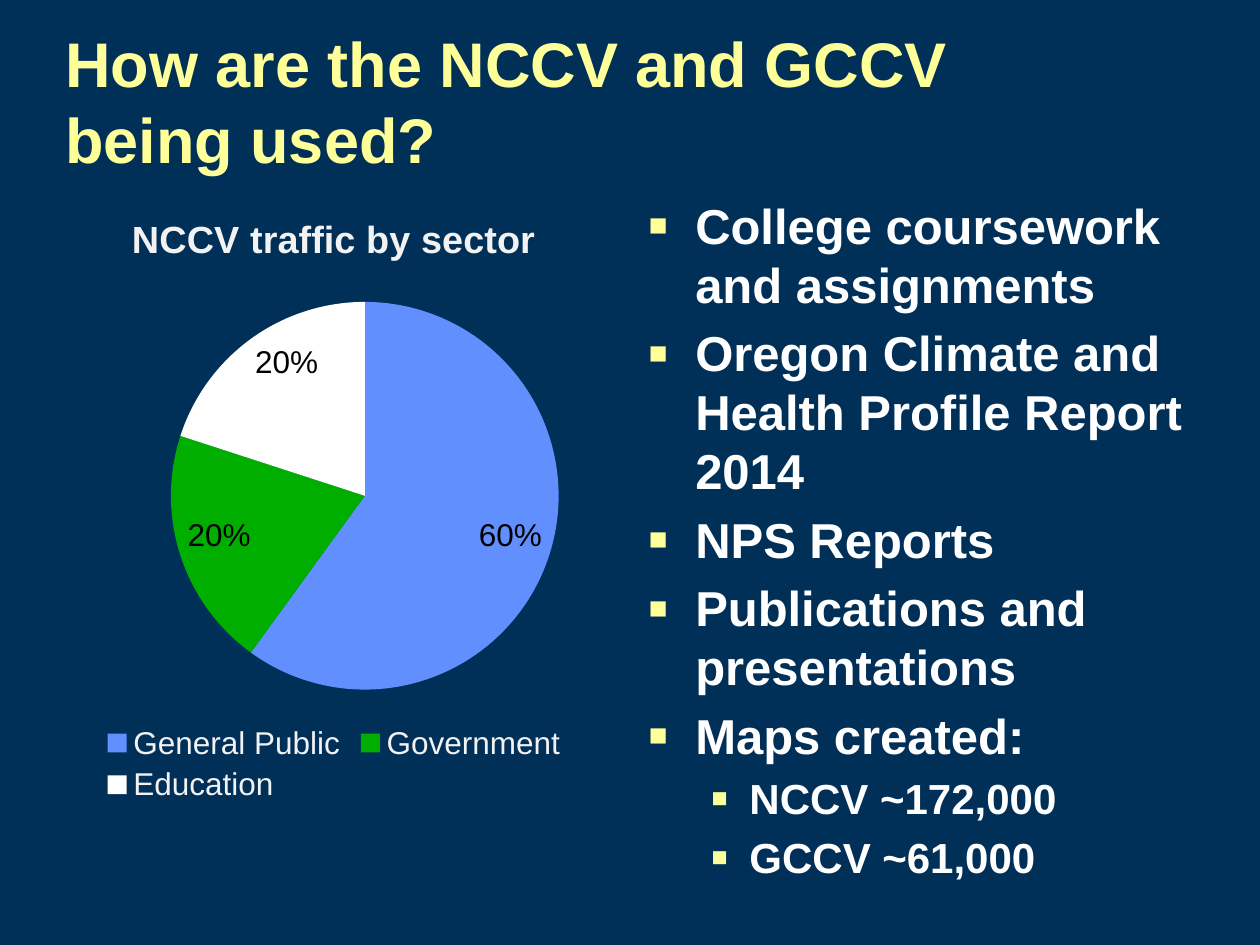
from lxml import etree
from pptx import Presentation
from pptx import util as u
from pptx.chart.data import CategoryChartData
from pptx.dml.color import RGBColor
from pptx.enum import chart as ch, text
from pptx.oxml import ns

COLORS = {"navy": "002F57", "yellow": "FFFF99", "white": "FFFFFF", "pale": "F2F2F2",
          "black": "000000", "blue": "618FFD", "green": "00AE00"}


def rgb(name):
    return RGBColor.from_string(COLORS[name])


class Deck:
    """Holds the style and the current slide."""
    font = "Arial"
    # Per level: text size, left margin and hanging indent in inches
    levels = [(28, 0.38, 0.38), (24, 0.81, 0.31)]

    def __init__(self, width, height):
        self.prs = Presentation()
        self.prs.slide_width, self.prs.slide_height = u.Inches(width), u.Inches(height)

    def slide(self, background):
        self.s = self.prs.slides.add_slide(self.prs.slide_layouts[6])
        self.s.background.fill.solid()
        self.s.background.fill.fore_color.rgb = rgb(background)

    def style(self, font, size, color, bold=False):
        font.name, font.size, font.bold = self.font, u.Pt(size), bold
        font.color.rgb = rgb(color)

    def run(self, p, words, size, color):
        r = p.add_run()
        r.text = words
        self.style(r.font, size, color, bold=True)

    def box(self, at, anchor):
        tf = self.s.shapes.add_textbox(*map(u.Inches, at)).text_frame
        tf.word_wrap = True
        tf.vertical_anchor = anchor
        return tf

    def title(self, at, lines):
        p = self.box(at, text.MSO_ANCHOR.MIDDLE).paragraphs[0]
        for i, line in enumerate(lines):
            if i:
                p.add_line_break()
            self.run(p, line, 36, "yellow")

    def bullet(self, p, margin, hanging):
        pPr = p._p.get_or_add_pPr()
        pPr.set("marL", str(u.Inches(margin)))
        pPr.set("indent", str(-u.Inches(hanging)))
        color = etree.SubElement(pPr, ns.qn("a:buClr"))
        etree.SubElement(color, ns.qn("a:srgbClr"), val=COLORS["yellow"])
        etree.SubElement(pPr, ns.qn("a:buSzPct"), val="125000")
        etree.SubElement(pPr, ns.qn("a:buFont"), typeface=self.font)
        etree.SubElement(pPr, ns.qn("a:buChar"), char="▪")

    def bullets(self, at, items):
        tf = self.box(at, text.MSO_ANCHOR.TOP)
        for i, (level, words) in enumerate(items):
            p = tf.add_paragraph() if i else tf.paragraphs[0]
            size, margin, hanging = self.levels[level]
            p.level = level
            self.bullet(p, margin, hanging)
            p.space_before = u.Pt(0.2 * size if i else 0)
            self.run(p, words, size, "white")

    def place_plot(self, chart, **fractions):
        """Fix the plot area as fractions (x, y, w, h) of the chart."""
        area = chart._chartSpace.chart.plotArea
        for old in area.findall(ns.qn("c:layout")):
            area.remove(old)
        layout = etree.Element(ns.qn("c:layout"))
        area.insert(0, layout)
        manual = etree.SubElement(layout, ns.qn("c:manualLayout"))
        settings = {"layoutTarget": "inner", "xMode": "edge", "yMode": "edge", **fractions}
        for tag, value in settings.items():
            etree.SubElement(manual, ns.qn("c:" + tag), val=str(value))

    def pie(self, at, heading, sectors):
        data = CategoryChartData()
        data.categories = [name for name, _, _ in sectors]
        data.add_series("Series 1", [value for _, value, _ in sectors])
        chart = self.s.shapes.add_chart(
            ch.XL_CHART_TYPE.PIE, *map(u.Inches, at), data).chart
        self.style(chart.font, 18, "black")
        self.place_plot(chart, x=0.21, y=0.18, w=0.69, h=0.63)

        # Chart title
        chart.has_title = True
        chart.chart_title.include_in_layout = False
        self.run(chart.chart_title.text_frame.paragraphs[0], heading, 21.6, "pale")

        # Legend
        chart.has_legend = True
        chart.legend.position = ch.XL_LEGEND_POSITION.BOTTOM
        chart.legend.include_in_layout = False
        self.style(chart.legend.font, 18, "pale")

        # Slices and percentages
        plot = chart.plots[0]
        plot.vary_by_categories = True
        for i, (_, _, color) in enumerate(sectors):
            fill = plot.series[0].points[i].format.fill
            fill.solid()
            fill.fore_color.rgb = rgb(color)
        plot.has_data_labels = True
        labels = plot.data_labels
        labels.show_percentage, labels.show_value = True, False
        labels.number_format, labels.number_format_is_linked = "0%", False
        labels.position = ch.XL_LABEL_POSITION.INSIDE_END
        self.style(labels.font, 18, "black")


def main():
    deck = Deck(10, 7.5)
    deck.slide("navy")
    deck.title((0.42, 0.17, 9.08, 1.25), ["How are the NCCV and GCCV ", "being used?"])
    deck.pie((0.42, 1.5, 4.46, 4.92), "NCCV traffic by sector", [
        ("General Public", 60, "blue"),
        ("Government", 20, "green"),
        ("Education", 20, "white"),
    ])
    deck.bullets((5.04, 1.5, 4.46, 5.81), [
        (0, "College coursework and assignments"),
        (0, "Oregon Climate and Health Profile Report 2014"),
        (0, "NPS Reports"),
        (0, "Publications and presentations"),
        (0, "Maps created:"),
        (1, "NCCV ~172,000"),
        (1, "GCCV ~61,000"),
    ])
    deck.prs.save("out.pptx")


if __name__ == "__main__":
    main()
